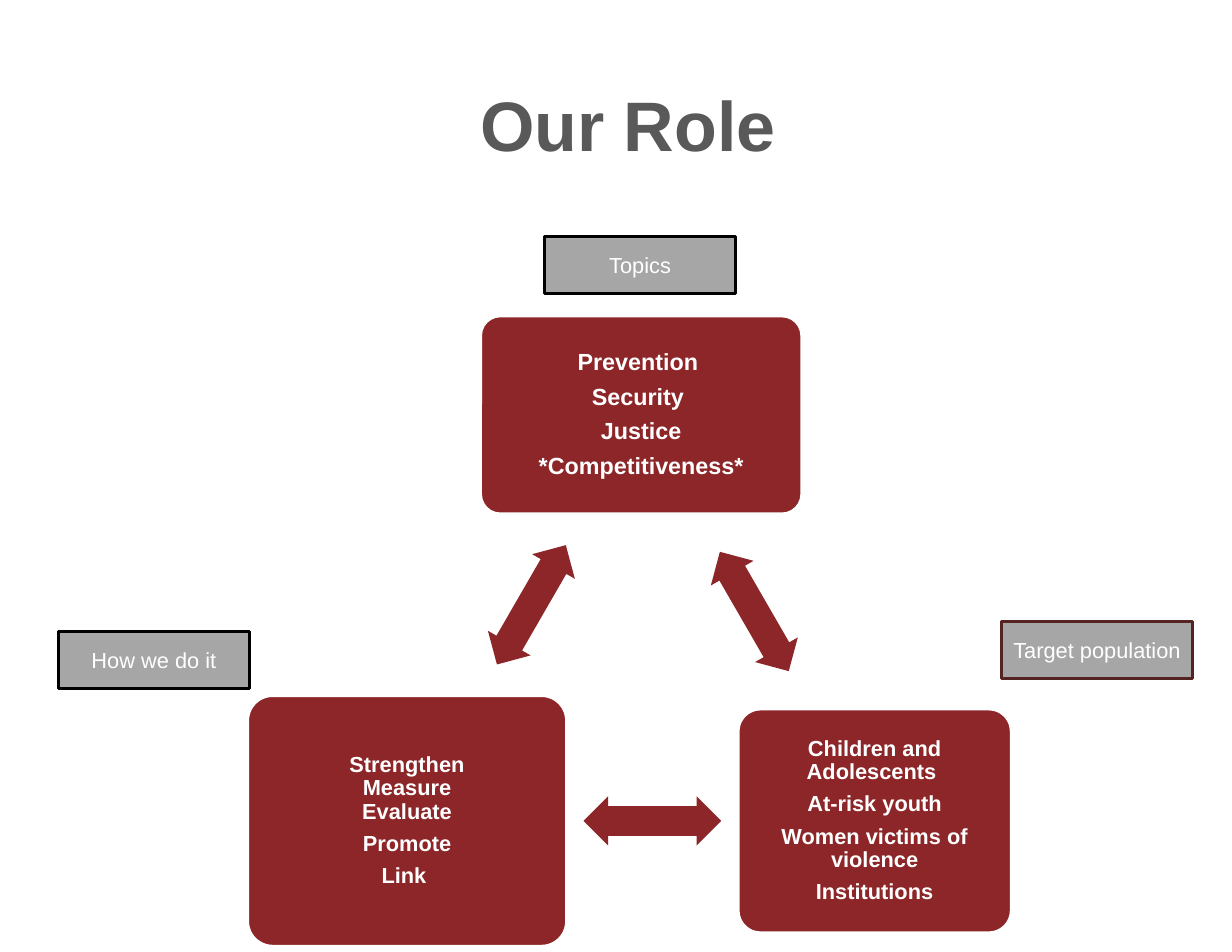
from pptx import Presentation
from pptx import util as u
from pptx.dml.color import RGBColor
from pptx.enum import shapes, text

COLORS = {
    "title": "595959",
    "card": "8C2628",
    "label": "A6A6A6",
    "white": "FFFFFF",
    "black": "000000",
    "maroon": "542322",
}
FONT = "Arial"
LABEL_SIZE = (1.71, 0.51)
ARROW_SIZE = (1.23, 0.44)


def rgb(name):
    return RGBColor.from_string(COLORS[name])


def set_font(paragraph, size, color, bold=False):
    paragraph.alignment = text.PP_ALIGN.CENTER
    font = paragraph.font
    font.name, font.size, font.bold = FONT, u.Pt(size), bold
    font.color.rgb = rgb(color)


def add_block(slide, kind, box, fill, line=None):
    """Add a flat filled shape, outlined only when a line colour is given."""
    block = slide.shapes.add_shape(kind, *map(u.Inches, box))
    block.shadow.inherit = False
    block.fill.solid()
    block.fill.fore_color.rgb = rgb(fill)
    if line:
        block.line.color.rgb = rgb(line)
        block.line.width = u.Pt(2)
    else:
        block.line.fill.background()
    return block


def add_title(slide, words):
    title = slide.shapes.add_textbox(*map(u.Inches, (0.67, 0.68, 9.35, 1.69)))
    frame = title.text_frame
    frame.word_wrap = True
    frame.margin_left = u.Inches(0.62)  # sets the title right of centre
    frame.text = words
    set_font(frame.paragraphs[0], 45, "title", bold=True)


def add_card(slide, box, size, items):
    card = add_block(slide, shapes.MSO_SHAPE.ROUNDED_RECTANGLE, box, "card", "white")
    card.adjustments[0] = 0.1
    frame = card.text_frame
    frame.word_wrap = True
    frame.vertical_anchor = text.MSO_ANCHOR.MIDDLE
    frame.margin_left = frame.margin_right = u.Inches(0.06)
    frame.margin_top = frame.margin_bottom = u.Inches(0.06)
    frame.text = "\n".join(items)
    for paragraph in frame.paragraphs:
        paragraph.line_spacing = 0.9
        paragraph.space_after = u.Pt(size * 0.4)
        set_font(paragraph, size, "white", bold=True)


def add_double_arrow(slide, left, top, rotation):
    arrow = add_block(slide, shapes.MSO_SHAPE.LEFT_RIGHT_ARROW,
                      (left, top, *ARROW_SIZE), "card")
    arrow.adjustments[0] = 0.6
    arrow.adjustments[1] = 0.5
    arrow.rotation = rotation


def add_label(slide, left, top, words, line):
    label = add_block(slide, shapes.MSO_SHAPE.RECTANGLE,
                      (left, top, *LABEL_SIZE), "label", line)
    frame = label.text_frame
    frame.word_wrap = True
    frame.vertical_anchor = text.MSO_ANCHOR.MIDDLE
    frame.text = words
    set_font(frame.paragraphs[0], 14, "white")


def main():
    deck = Presentation()
    deck.slide_width, deck.slide_height = u.Inches(11), u.Inches(8.5)
    slide = deck.slides.add_slide(deck.slide_layouts[6])

    add_title(slide, "Our Role")

    add_card(slide, (4.29, 2.82, 2.87, 1.77), 15,
             ["Prevention ", "Security ", "Justice", "*Competitiveness*"])
    add_card(slide, (6.59, 6.33, 2.44, 2), 14,
             ["Children and Adolescents ", "At-risk youth",
              "Women victims of violence", "Institutions"])
    add_card(slide, (2.21, 6.21, 2.85, 2.24), 14,
             ["Strengthen\vMeasure\vEvaluate", "Promote", "Link "])

    for left, top, rotation in ((6.12, 5.24, 60), (5.21, 7.11, 180), (4.13, 5.18, 300)):
        add_double_arrow(slide, left, top, rotation)

    add_label(slide, 4.86, 2.11, "Topics", "black")
    add_label(slide, 0.52, 5.64, "How we do it", "black")
    add_label(slide, 8.94, 5.55, "Target population", "maroon")

    deck.save("out.pptx")


if __name__ == "__main__":
    main()
